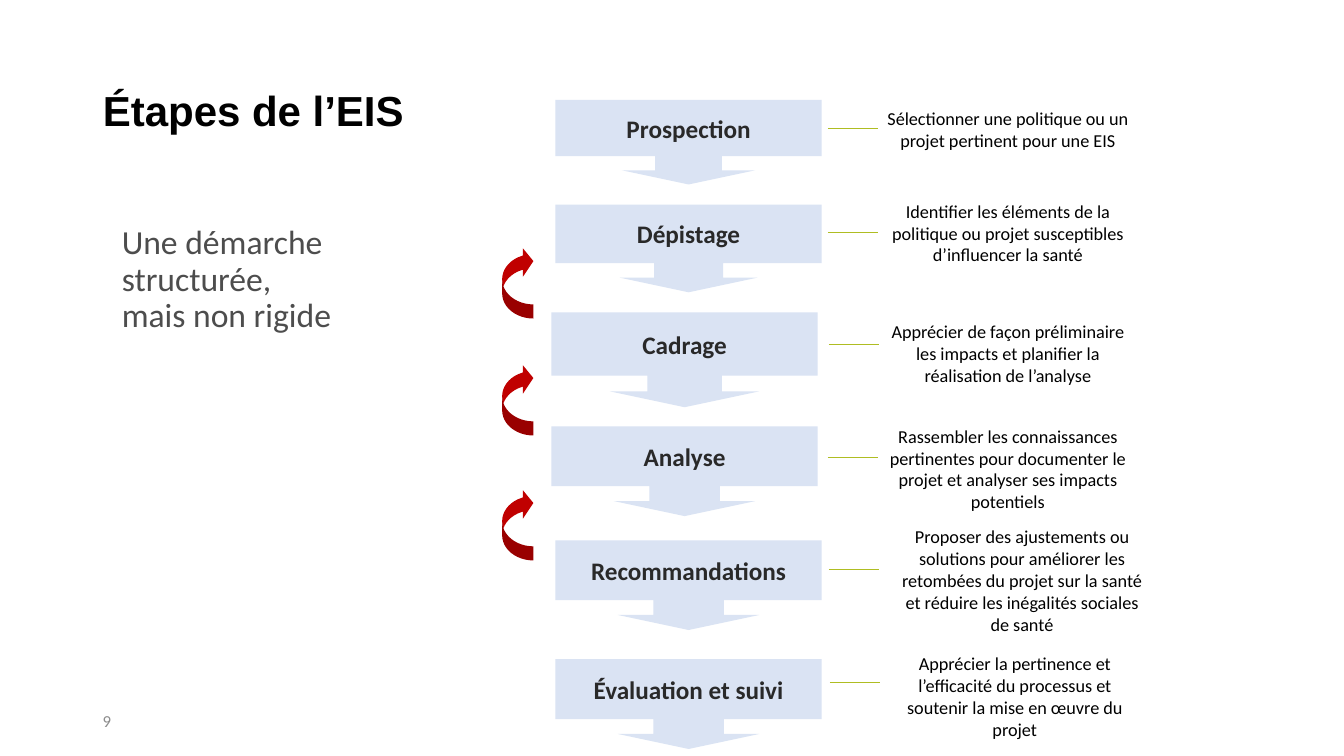
from dataclasses import dataclass

from lxml import etree
from pptx import Presentation
from pptx.dml.color import RGBColor
from pptx.enum.shapes import MSO_CONNECTOR, MSO_SHAPE
from pptx.enum.text import MSO_ANCHOR as Anchor, MSO_AUTO_SIZE, PP_ALIGN as Align
from pptx.oxml.ns import qn
from pptx.util import Inches, Pt

BLACK = RGBColor(0x00, 0x00, 0x00)
WHITE = RGBColor(0xFF, 0xFF, 0xFF)
GREY = RGBColor(0x4D, 0x4D, 0x4D)
LIGHT_GREY = RGBColor(0x8C, 0x8C, 0x8C)
DARK = RGBColor(0x29, 0x29, 0x29)
PALE_BLUE = RGBColor(0xDA, 0xE3, 0xF3)
RED = RGBColor(0xC0, 0x00, 0x00)
GREEN = RGBColor(0xAF, 0xBD, 0x22)

CALLOUT_ADJ = (0.787, 0.787, 0.167, 0.667)
LOOP_ADJ = (0.452, 0.904, 0.333)
LOOP_TOPS = (2.45, 3.61, 4.85)
LINK_LENGTH = 0.5


@dataclass
class Stage:
    name: str
    left: float
    top: float
    height: float
    note: str
    note_top: float
    link_left: float
    link_y: float
    note_left: float = 8.65
    note_width: float = 2.69
    note_height: float = 0.84
    note_inset: float = 0.1


STAGES = [
    Stage("Prospection", 5.51, 0.99, 0.84,
          "Sélectionner une politique ou un projet pertinent pour une EIS",
          0.86, 8.21, 1.27),
    Stage("Dépistage", 5.51, 2.03, 0.87,
          "Identifier les éléments de la politique ou projet susceptibles "
          "d’influencer la santé",
          1.89, 8.21, 2.31),
    Stage("Cadrage", 5.47, 3.1, 0.94,
          "Apprécier de façon préliminaire les impacts et planifier la "
          "réalisation de l’analyse",
          3.02, 8.22, 3.42, note_height=0.97),
    Stage("Analyse", 5.47, 4.23, 0.89,
          "Rassembler les connaissances pertinentes pour documenter le projet "
          "et analyser ses impacts potentiels",
          4.23, 8.21, 4.54),
    Stage("Recommandations", 5.51, 5.36, 0.89,
          "Proposer des ajustements ou solutions pour améliorer les retombées "
          "du projet sur la santé et réduire les inégalités sociales de santé",
          5.29, 8.22, 5.65, 8.6, 2.88, 0.93, note_inset=0.29),
    Stage("Évaluation et suivi", 5.51, 6.54, 0.89,
          "Apprécier la pertinence et l’efficacité du processus et soutenir "
          "la mise en œuvre du projet",
          6.49, 8.23, 6.77, note_width=2.83),
]


def write(sp, text: str, size: float, color: RGBColor, font: str = "Calibri",
          bold: bool = False, align=Align.LEFT, anchor=Anchor.MIDDLE,
          wrap: bool = True):
    tf = sp.text_frame
    tf.auto_size = MSO_AUTO_SIZE.NONE
    tf.word_wrap = wrap
    tf.vertical_anchor = anchor
    p = tf.paragraphs[0]
    p.alignment = align
    r = p.add_run()
    r.text = text
    r.font.name = font
    r.font.size = Pt(size)
    r.font.bold = bold
    r.font.color.rgb = color
    return p


def add_block(s, kind, left: float, top: float, width: float, height: float,
              fill: RGBColor, adjustments: tuple = ()):
    sp = s.shapes.add_shape(kind, Inches(left), Inches(top),
                            Inches(width), Inches(height))
    sp.shadow.inherit = False
    sp.fill.solid()
    sp.fill.fore_color.rgb = fill
    sp.line.fill.background()
    for i, value in enumerate(adjustments):
        sp.adjustments[i] = value
    return sp


def add_textbox(s, left: float, top: float, width: float, height: float):
    return s.shapes.add_textbox(Inches(left), Inches(top),
                                Inches(width), Inches(height))


def add_link(s, left: float, y: float) -> None:
    line = s.shapes.add_connector(MSO_CONNECTOR.STRAIGHT, Inches(left), Inches(y),
                                  Inches(left + LINK_LENGTH), Inches(y))
    line.line.color.rgb = GREEN
    line.line.width = Pt(0.5)
    etree.SubElement(line._element.spPr, qn("a:effectLst"))


def add_stage(s, stage: Stage) -> None:
    step = add_block(s, MSO_SHAPE.DOWN_ARROW_CALLOUT, stage.left, stage.top,
                     2.64, stage.height, PALE_BLUE, CALLOUT_ADJ)
    write(step, stage.name, 18, DARK, bold=True, align=Align.CENTER, wrap=False)

    note = add_block(s, MSO_SHAPE.ROUNDED_RECTANGLE, stage.note_left, stage.note_top,
                     stage.note_width, stage.note_height, WHITE)
    note.text_frame.margin_left = Inches(stage.note_inset)
    write(note, stage.note, 13, BLACK, align=Align.CENTER)

    add_link(s, stage.link_left, stage.link_y)


def main() -> None:
    prs = Presentation()
    prs.slide_width, prs.slide_height = Inches(13.33), Inches(7.5)
    s = prs.slides.add_slide(prs.slide_layouts[5])

    # Title
    title = s.shapes.title
    title.left, title.top = Inches(0.92), Inches(0.4)
    title.width, title.height = Inches(11.5), Inches(1.45)
    write(title, "Étapes de l’EIS", 30, BLACK, "Arial", bold=True).line_spacing = 0.9

    # Subtitle and page number
    subtitle = add_textbox(s, 1.11, 1.78, 2.36, 4.76)
    subtitle.text_frame.margin_top = Inches(0.46)
    p = write(subtitle, "Une démarche structurée, mais non rigide", 24, GREY,
              anchor=Anchor.TOP)
    p.line_spacing = 0.9
    write(add_textbox(s, 0.92, 6.95, 3, 0.4), "9", 12, LIGHT_GREY)

    # Stages with their notes
    for stage in STAGES:
        add_stage(s, stage)

    # Feedback loops
    for top in LOOP_TOPS:
        loop = add_block(s, MSO_SHAPE.CURVED_LEFT_ARROW, 4.98, top, 0.31, 0.71,
                         RED, LOOP_ADJ)
        loop.rotation = 180

    prs.save("out.pptx")


if __name__ == "__main__":
    main()
